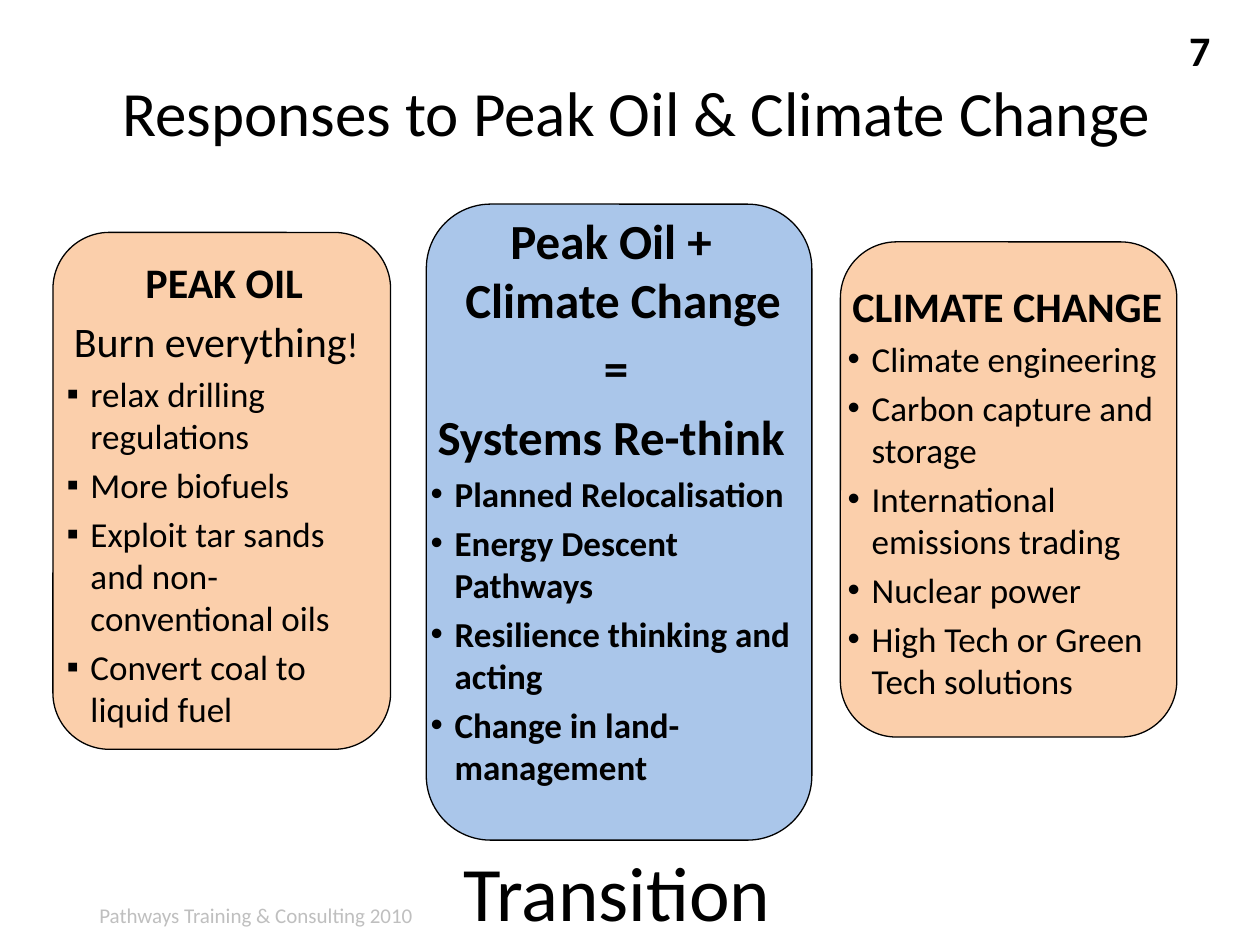
from pptx import Presentation, util as u
from pptx.dml.color import RGBColor
from pptx.enum import shapes, text
from pptx.oxml.ns import qn
from lxml import etree

hues = {"ink": "000000", "grey": "BFBFBF", "peach": "FAC090", "blue": "8EB4E3"}
deck = Presentation()
deck.slide_width, deck.slide_height = u.Inches(10), u.Inches(7.5)
slide = deck.slides.add_slide(deck.slide_layouts[6])
wide, high = deck.slide_width / 100, deck.slide_height / 100
hang = 0.19


def area(x, y, w, h):
    return int(x * wide), int(y * high), int(w * wide), int(h * high)


def style(font, size, bold=False, hue="ink"):
    font.name, font.size, font.bold = "Calibri", u.Pt(size), bold
    font.color.rgb = RGBColor.from_string(hues[hue])


labels = [
    ("Pathways Training & Consulting 2010", (6.9, 94.9, 27.4, 4), 12, False, "grey"),
    ("Responses to Peak Oil & Climate Change", (4.3, 4.8, 95.6, 20.9), 36, False, "ink"),
    ("7", (93.4, 1.9, 3.7, 6.7), 24, True, "ink"),
    ("Transition", (35.8, 88.7, 27.4, 11.2), 44, False, "ink"),
]
for words, place, size, bold, hue in labels:
    frame = slide.shapes.add_textbox(*area(*place)).text_frame
    frame.word_wrap = False
    para = frame.paragraphs[0]
    para.text = words
    style(para.font, size, bold, hue)
    if size == 36:
        frame.word_wrap = True
        frame.margin_top, frame.margin_right = u.Inches(0.22), u.Inches(0.42)
        para.alignment = text.PP_ALIGN.CENTER

cards = [
    ("peach", (66.7, 25.6, 26.7, 52.4), (66.3, 29, 27.3, 50.1), "•", False,
     [([("CLIMATE CHANGE", 24, True)], 0)],
     ["Climate engineering", "Carbon capture and storage",
      "International emissions trading", "Nuclear power",
      "High Tech or Green Tech solutions"]),
    ("blue", (33.84, 21.6, 30.6, 67.3), (33.2, 21.6, 30.6, 63.3), "•", True,
     [([("Peak Oil + Climate Change", 28, True)], 0),
      ([("=", 28, True)], 0.08),
      ([("Systems Re-think", 28, True)], 0)],
     ["Planned Relocalisation", "Energy Descent Pathways",
      "Resilience thinking and acting", "Change in land-management"]),
    ("peach", (4.2, 24.6, 26.8, 54.7), (4.3, 26.5, 25.7, 52.8), "▪", False,
     [([("PEAK OIL", 24, True)], 0.13),
      ([("Burn everything", 24, False), ("!", 20, False)], 0)],
     ["relax drilling regulations", "More biofuels",
      "Exploit tar sands and non-conventional oils",
      "Convert coal to liquid fuel"]),
]
for hue, panel, place, mark, bold, heads, items in cards:
    card = slide.shapes.add_shape(shapes.MSO_SHAPE.ROUNDED_RECTANGLE, *area(*panel))
    card.adjustments[0] = 0.167
    card.shadow.inherit = False
    card.fill.solid()
    card.fill.fore_color.rgb = RGBColor.from_string(hues[hue])
    tone = card.fill._xPr.find(qn("a:solidFill"))[0]
    etree.SubElement(tone, qn("a:alpha"), val="75000")
    card.line.color.rgb = RGBColor.from_string(hues["ink"])
    card.line.width = u.Pt(0.75)

    frame = slide.shapes.add_textbox(*area(*place)).text_frame
    frame.word_wrap = True
    rows = heads + [([(item, 20, bold)], None) for item in items]
    for n, (runs, shift) in enumerate(rows):
        para = frame.paragraphs[0] if n == 0 else frame.add_paragraph()
        props = para._p.get_or_add_pPr()
        props.set("marL", str(u.Inches(hang)))
        props.set("indent", str(u.Inches((shift or 0) - hang)))
        if shift is None:
            etree.SubElement(props, qn("a:buFont"), typeface="Arial")
            etree.SubElement(props, qn("a:buChar"), char=mark)
        else:
            para.alignment = text.PP_ALIGN.CENTER
        if n:
            para.space_before = u.Pt(runs[0][1] * 0.2)
        style(para.font, *runs[0][1:])
        for words, size, heavy in runs:
            run = para.add_run()
            run.text = words
            if size != runs[0][1]:
                run.font.size = u.Pt(size)

deck.save("out.pptx")
